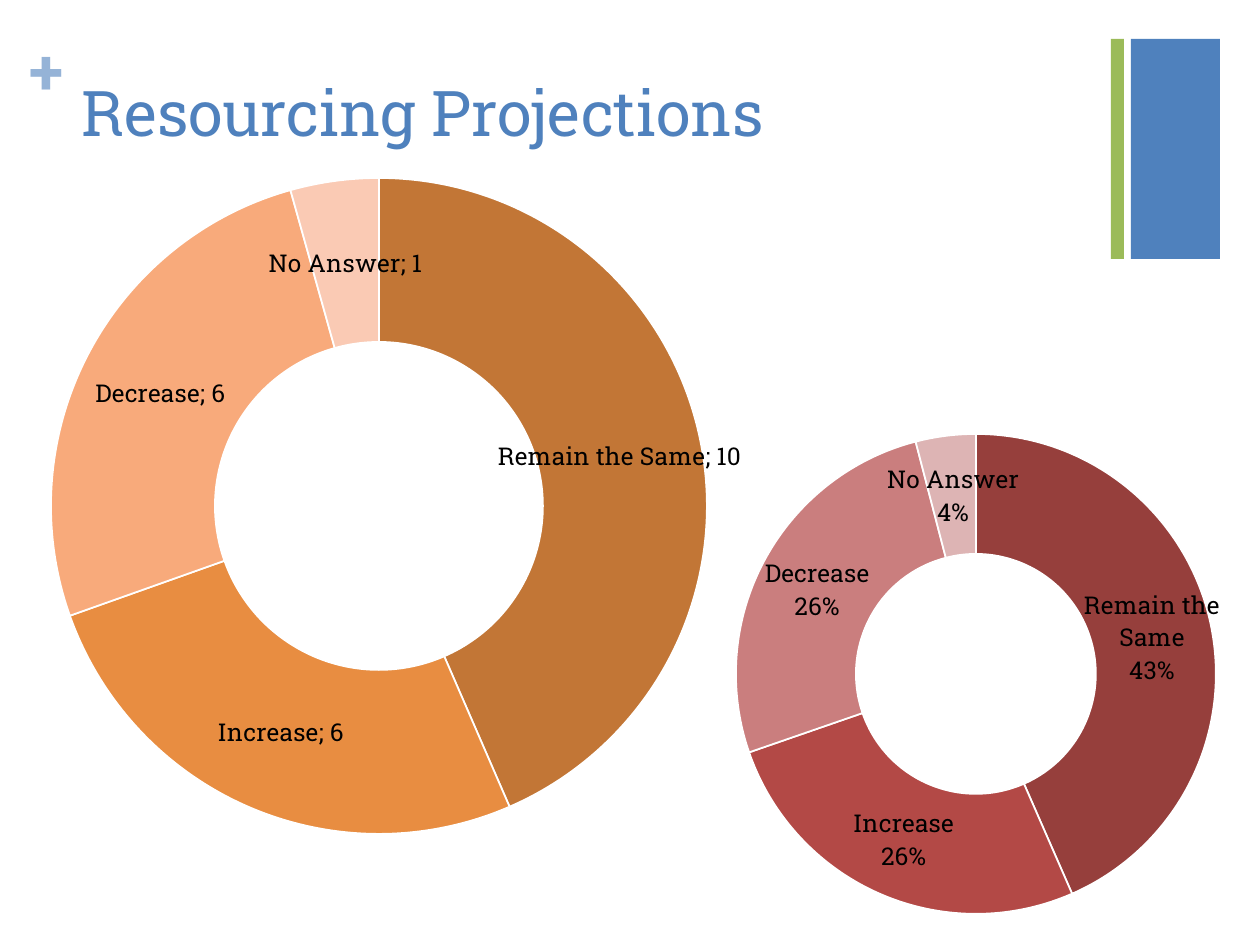
from lxml import etree
from pptx import Presentation
from pptx.chart.data import CategoryChartData
from pptx.dml.color import RGBColor
from pptx.enum.chart import XL_CHART_TYPE
from pptx.enum.shapes import MSO_SHAPE
from pptx.oxml.ns import qn
from pptx.util import Pt

RECT = MSO_SHAPE.RECTANGLE
DOUGHNUT = XL_CHART_TYPE.DOUGHNUT
FONT = "Roboto Slab"
COLORS = {
    "blue": "4F81BD", "light_blue": "95B3D7", "green": "9BBB59",
    "white": "FFFFFF", "black": "000000",
    "orange1": "C27636", "orange2": "E88D41", "orange3": "F8AA7B", "orange4": "FACAB4",
    "red1": "963F3C", "red2": "B34946", "red3": "CA7E7E", "red4": "DDB4B4",
}
CATEGORIES = ["Remain the Same", "Increase", "Decrease", "No Answer"]


def px(n):
    return round(n * 914400 / 126)


def rgb(name):
    return RGBColor.from_string(COLORS[name])


def write(tf, text, size=14, color="black", bold=False):
    r = tf.paragraphs[0].add_run()
    r.text = text
    r.font.name, r.font.size, r.font.bold = FONT, Pt(size), bold
    r.font.color.rgb = rgb(color)


class Deck:
    """Holds the style and the current slide."""

    def __init__(self, width, height):
        self.prs = Presentation()
        self.prs.slide_width, self.prs.slide_height = px(width), px(height)
        self.s = self.prs.slides.add_slide(self.prs.slide_layouts[6])

    def bar(self, x, y, w, h, color):
        sp = self.s.shapes.add_shape(RECT, px(x), px(y), px(w), px(h))
        sp.shadow.inherit = False
        sp.fill.solid()
        sp.fill.fore_color.rgb = rgb(color)
        sp.line.fill.background()

    def text(self, x, y, w, h, text, inset=True, **fmt):
        tf = self.s.shapes.add_textbox(px(x), px(y), px(w), px(h)).text_frame
        tf.word_wrap = True
        if not inset:
            tf.margin_left = tf.margin_right = tf.margin_top = tf.margin_bottom = 0
        write(tf, text, **fmt)

    def doughnut(self, frame, ring, values, hue, percent=False):
        data = CategoryChartData()
        data.categories = CATEGORIES
        data.add_series("Series 1", values)
        chart = self.s.shapes.add_chart(DOUGHNUT, *map(px, frame), data).chart
        chart.has_legend = chart.has_title = False
        chart.font.name, chart.font.size = FONT, Pt(14)
        chart.font.color.rgb = rgb("black")
        plot = chart.plots[0]
        plot.vary_by_categories = True
        for i in range(len(values)):
            fmt = plot.series[0].points[i].format
            fmt.fill.solid()
            fmt.fill.fore_color.rgb = rgb(f"{hue}{i + 1}")
            fmt.line.color.rgb = rgb("white")
            fmt.line.width = Pt(1)
        plot.has_data_labels = True
        labels = plot.data_labels
        labels.show_category_name = True
        labels.show_value, labels.show_percentage = not percent, percent
        labels.number_format = "0%" if percent else "General"
        labels.number_format_is_linked = False
        root = chart.element
        separator = etree.Element(qn("c:separator"))
        separator.text = "\n" if percent else "; "
        root.find(".//" + qn("c:dLbls")).find(qn("c:showBubbleSize")).addnext(separator)
        self.place_ring(root.find(".//" + qn("c:plotArea")), frame, ring)

    def place_ring(self, area, frame, ring):
        left, top, width, height = frame
        cx, cy, radius = ring
        for old in area.findall(qn("c:layout")):
            area.remove(old)
        layout = etree.Element(qn("c:layout"))
        area.insert(0, layout)
        manual = etree.SubElement(layout, qn("c:manualLayout"))
        settings = {
            "layoutTarget": "inner", "xMode": "edge", "yMode": "edge",
            "x": (cx - radius - left) / width, "y": (cy - radius - top) / height,
            "w": 2 * radius / width, "h": 2 * radius / height,
        }
        for tag, value in settings.items():
            etree.SubElement(manual, qn(f"c:{tag}")).set("val", str(value))


def main():
    deck = Deck(1260, 945)
    deck.bar(1131, 39, 89, 220, "blue")
    deck.text(30, 32, 37, 77, "+", inset=False, size=36, color="light_blue", bold=True)
    deck.bar(1111, 39, 13, 220, "green")
    deck.text(69, 67, 1041, 154, "Resourcing Projections", size=36, color="blue")
    deck.doughnut((658, 397, 645, 548), (976, 674, 240), (43, 26, 26, 4), "red", percent=True)
    deck.doughnut((0, 161, 770, 692), (379, 506, 328), (10, 6, 6, 1), "orange")
    deck.prs.save("out.pptx")


if __name__ == "__main__":
    main()
